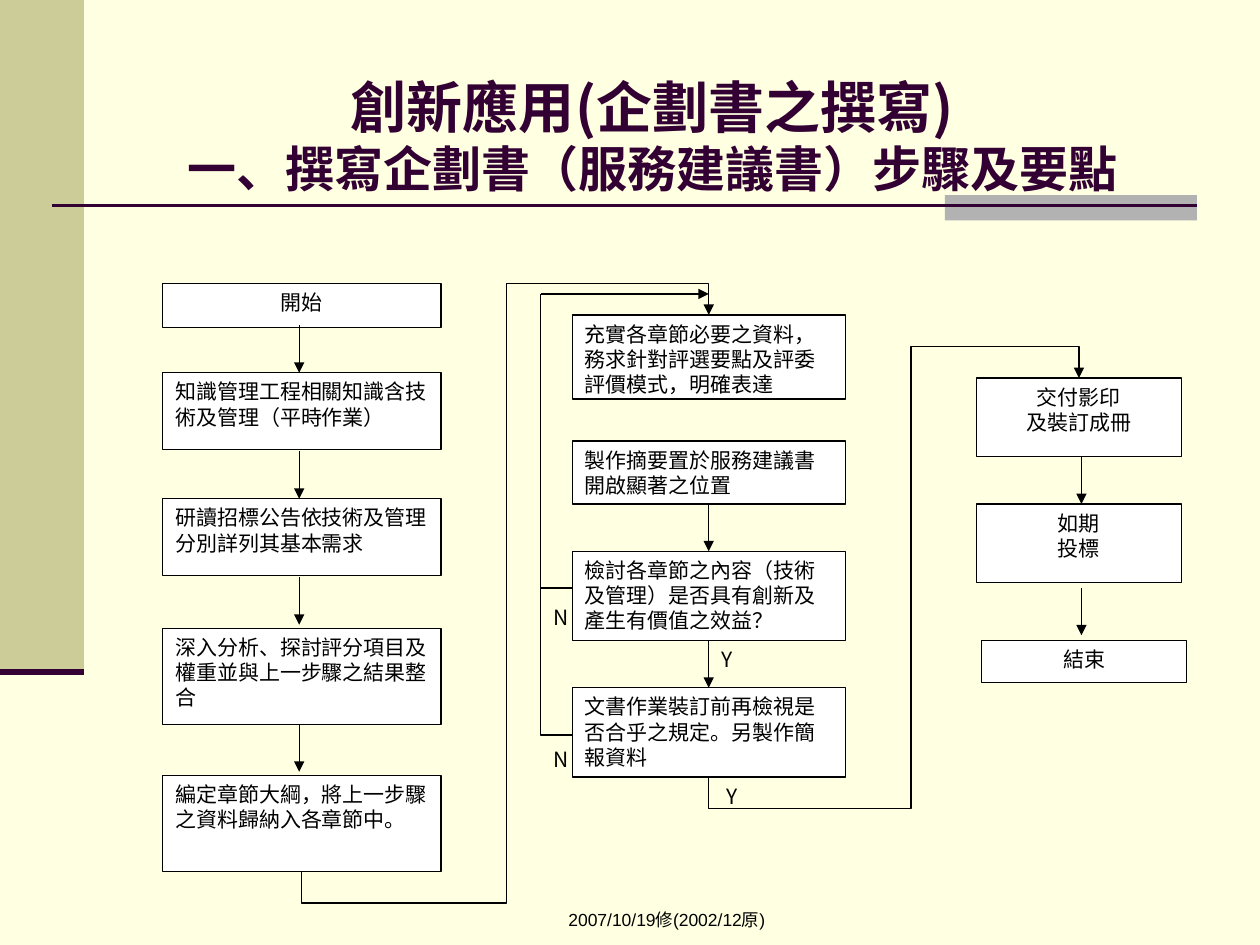
"""Build the slide on the steps of writing a proposal as a flowchart."""
from lxml import etree
from pptx import Presentation
from pptx.dml.color import RGBColor
from pptx.enum.shapes import MSO_CONNECTOR, MSO_SHAPE
from pptx.enum.text import MSO_ANCHOR, PP_ALIGN
from pptx.oxml.ns import qn
from pptx.util import Pt

CREAM = RGBColor(0xFF, 0xFF, 0xE1)
OLIVE = RGBColor(0xCC, 0xCC, 0x99)
GREY = RGBColor(0xB2, 0xB2, 0xB2)
PLUM = RGBColor(0x33, 0x00, 0x33)
BLACK = RGBColor(0x00, 0x00, 0x00)
WHITE = RGBColor(0xFF, 0xFF, 0xFF)
STRAIGHT, ELBOW = MSO_CONNECTOR.STRAIGHT, MSO_CONNECTOR.ELBOW
RECTANGLE = MSO_SHAPE.RECTANGLE
LEFT, CENTER = PP_ALIGN.LEFT, PP_ALIGN.CENTER
TOP, MIDDLE = MSO_ANCHOR.TOP, MSO_ANCHOR.MIDDLE
BODY_FONT, TITLE_FONT = "Noto Sans CJK JP", "Noto Sans CJK SC"

presentation = Presentation()
presentation.slide_width, presentation.slide_height = Pt(720), Pt(540)
slide = presentation.slides.add_slide(presentation.slide_layouts[6])
slide.background.fill.solid()
slide.background.fill.fore_color.rgb = CREAM
shapes = slide.shapes


def write_text(holder, text, sizes=(12,), font=BODY_FONT, east_font=BODY_FONT,
               color=BLACK, bold=False, align=LEFT, anchor=TOP, spacing=14.4):
    frame = holder.text_frame
    frame.word_wrap = True
    frame.vertical_anchor = anchor
    frame.text = text
    for paragraph in frame.paragraphs:
        paragraph.alignment = align
        paragraph.line_spacing = Pt(spacing)
        for run, size in zip(paragraph.runs, sizes):
            run.font.size = Pt(size)
            run.font.name = font
            run.font.bold = bold
            run.font.color.rgb = color
            east = etree.Element(qn("a:ea"), typeface=east_font)
            run.font._element.find(qn("a:latin")).addnext(east)


def connect(x1, y1, x2, y2, kind=STRAIGHT, color=BLACK, width=0.75, arrow=True):
    link = shapes.add_connector(kind, Pt(x1), Pt(y1), Pt(x2), Pt(y2))
    link.line.color.rgb = color
    link.line.width = Pt(width)
    properties = link._element.spPr
    if arrow:
        etree.SubElement(properties.find(qn("a:ln")), qn("a:tailEnd"), type="triangle")
    etree.SubElement(properties, qn("a:effectLst"))
    return link


for left, top, width, height, color in [
    (0, 0, 48, 384, OLIVE),
    (540, 111.5, 144, 14.5, GREY),
]:
    panel = shapes.add_shape(RECTANGLE, Pt(left), Pt(top), Pt(width), Pt(height))
    panel.shadow.inherit = False
    panel.fill.solid()
    panel.fill.fore_color.rgb = color
    panel.line.fill.background()
connect(30, 117.5, 684, 117.5, color=PLUM, width=1.5, arrow=False)
connect(0, 384, 48, 384, color=PLUM, width=3.5, arrow=False)

title = shapes.add_textbox(Pt(66), Pt(16.5), Pt(613.5), Pt(115))
title.text_frame.margin_top = Pt(15.6)
write_text(title, "創新應用(企劃書之撰寫)\v一、撰寫企劃書（服務建議書）步驟及要點",
           sizes=(32, 28), font=TITLE_FONT, east_font=TITLE_FONT, color=PLUM,
           bold=True, align=CENTER, anchor=MIDDLE, spacing=33)

revision = shapes.add_textbox(Pt(264), Pt(516), Pt(234), Pt(12))
write_text(revision, "2007/10/19修(2002/12原)", sizes=(10,), font="Arial",
           align=CENTER, spacing=12)

steps = []
for left, top, width, height, align, text in [
    (93, 162, 159, 25, CENTER, "開始"),
    (93, 213, 159, 44, LEFT, "知識管理工程相關知識含技術及管理（平時作業）"),
    (93, 285, 159, 44, LEFT, "研讀招標公告依技術及管理分別詳列其基本需求"),
    (93, 359, 159, 55, LEFT, "深入分析、探討評分項目及權重並與上一步驟之結果整合"),
    (93, 443, 159, 55, LEFT, "編定章節大綱，將上一步驟之資料歸納入各章節中。"),
    (327, 180, 156, 48, LEFT, "充實各章節必要之資料，務求針對評選要點及評委評價模式，明確表達"),
    (327, 252, 156, 36, LEFT, "製作摘要置於服務建議書開啟顯著之位置"),
    (327, 315, 156, 51, LEFT, "檢討各章節之內容（技術及管理）是否具有創新及產生有價值之效益？"),
    (327, 393, 156, 51, LEFT, "文書作業裝訂前再檢視是否合乎之規定。另製作簡報資料"),
    (558, 216, 117, 45, CENTER, "交付影印\n及裝訂成冊"),
    (558, 288, 117, 45, CENTER, "如期\n投標"),
    (561, 366, 117, 24, CENTER, "結束"),
]:
    step = shapes.add_shape(RECTANGLE, Pt(left), Pt(top), Pt(width), Pt(height))
    step.shadow.inherit = False
    step.fill.solid()
    step.fill.fore_color.rgb = WHITE
    step.line.color.rgb = BLACK
    step.line.width = Pt(0.75)
    write_text(step, text, align=align)
    steps.append(step)
summary, review, final_check = steps[6:9]

for x, y in [(171, 186), (171, 258), (171, 330), (171, 414), (618, 261), (618, 336)]:
    connect(x, y, x, y + 27)
for upper, lower in [(summary, review), (review, final_check)]:
    flow = connect(405, 288, 405, 315)
    flow.begin_connect(upper, 2)
    flow.end_connect(lower, 0)

OVERSHOOT = 18
for x1, y1, x2, y2, lane in [
    (405, 444, 616.5, 216, 520.5),
    (172.5, 498, 405, 180, 289.5),
]:
    run_across, rise = x2 - x1, y1 - y2
    center_x, center_y = (x1 + x2) / 2, (y1 + y2) / 2
    detour = connect(center_x + rise / 2, center_y + run_across / 2,
                     center_x - rise / 2, center_y - run_across / 2, kind=ELBOW)
    properties = detour._element.spPr
    properties.find(qn("a:xfrm")).set("rot", "5400000")
    geometry = properties.find(qn("a:prstGeom"))
    geometry.set("prst", "bentConnector5")
    bends = geometry.find(qn("a:avLst"))
    ratios = (-OVERSHOOT / rise, (lane - x1) / run_across, 1 + OVERSHOOT / rise)
    for number, ratio in enumerate(ratios, 1):
        etree.SubElement(bends, qn("a:gd"), name=f"adj{number}",
                         fmla=f"val {round(ratio * 100000)}")

outline = shapes.build_freeform(Pt(309), Pt(168))
outline.add_line_segments([(Pt(309), Pt(420)), (Pt(327), Pt(420))], close=False)
return_path = outline.convert_to_shape()
return_path.shadow.inherit = False
return_path.fill.background()
return_path.line.color.rgb = BLACK
return_path.line.width = Pt(0.75)
connect(309, 168, 405, 168)
connect(309, 336, 327, 336, arrow=False)

for left, top, width, answer in [
    (405, 366, 36, "Y"),
    (408, 444, 27, "Y"),
    (309, 342, 27, "N"),
    (309, 423, 27, "N"),
]:
    branch = shapes.add_textbox(Pt(left), Pt(top), Pt(width), Pt(27))
    write_text(branch, answer)

presentation.save("out.pptx")
